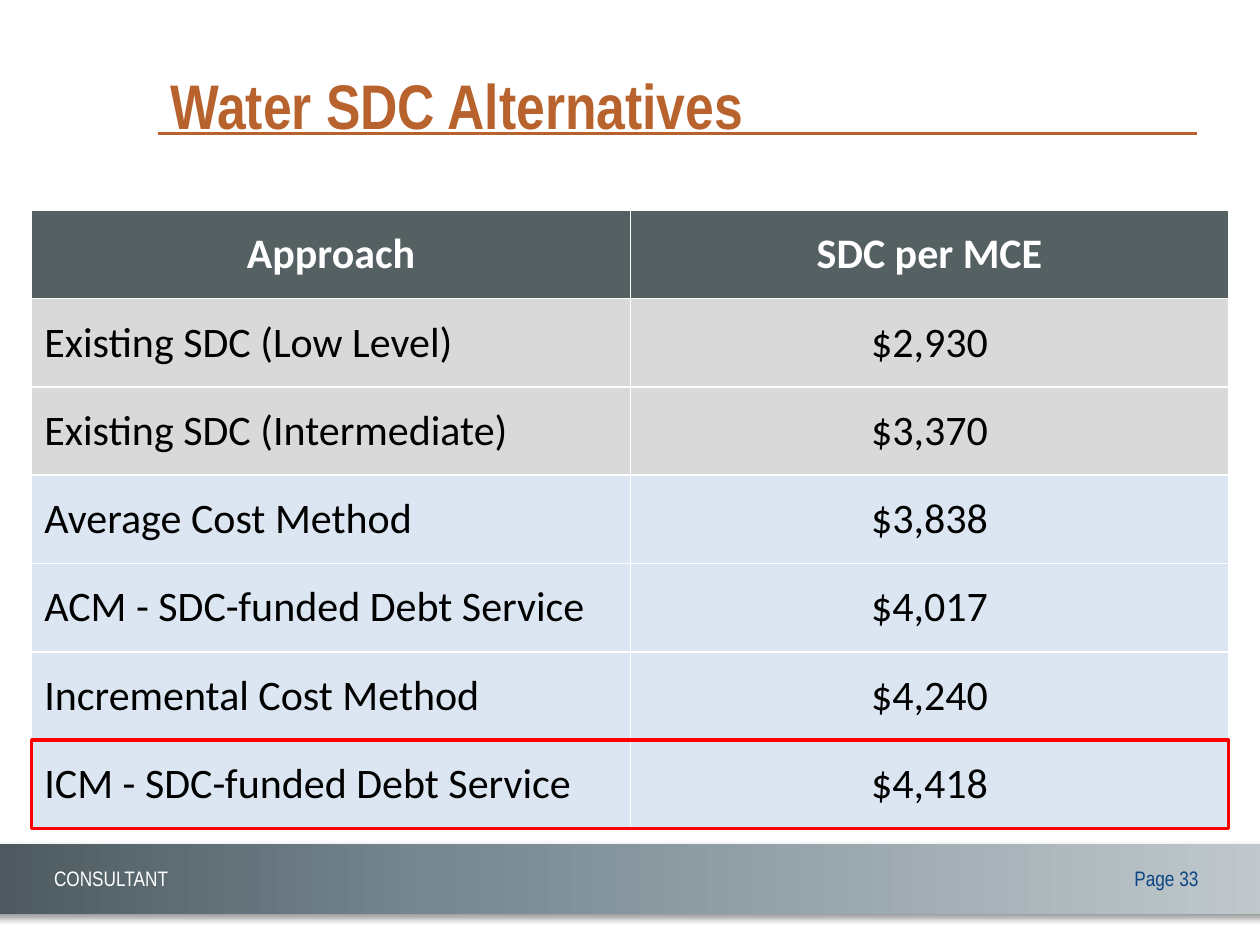
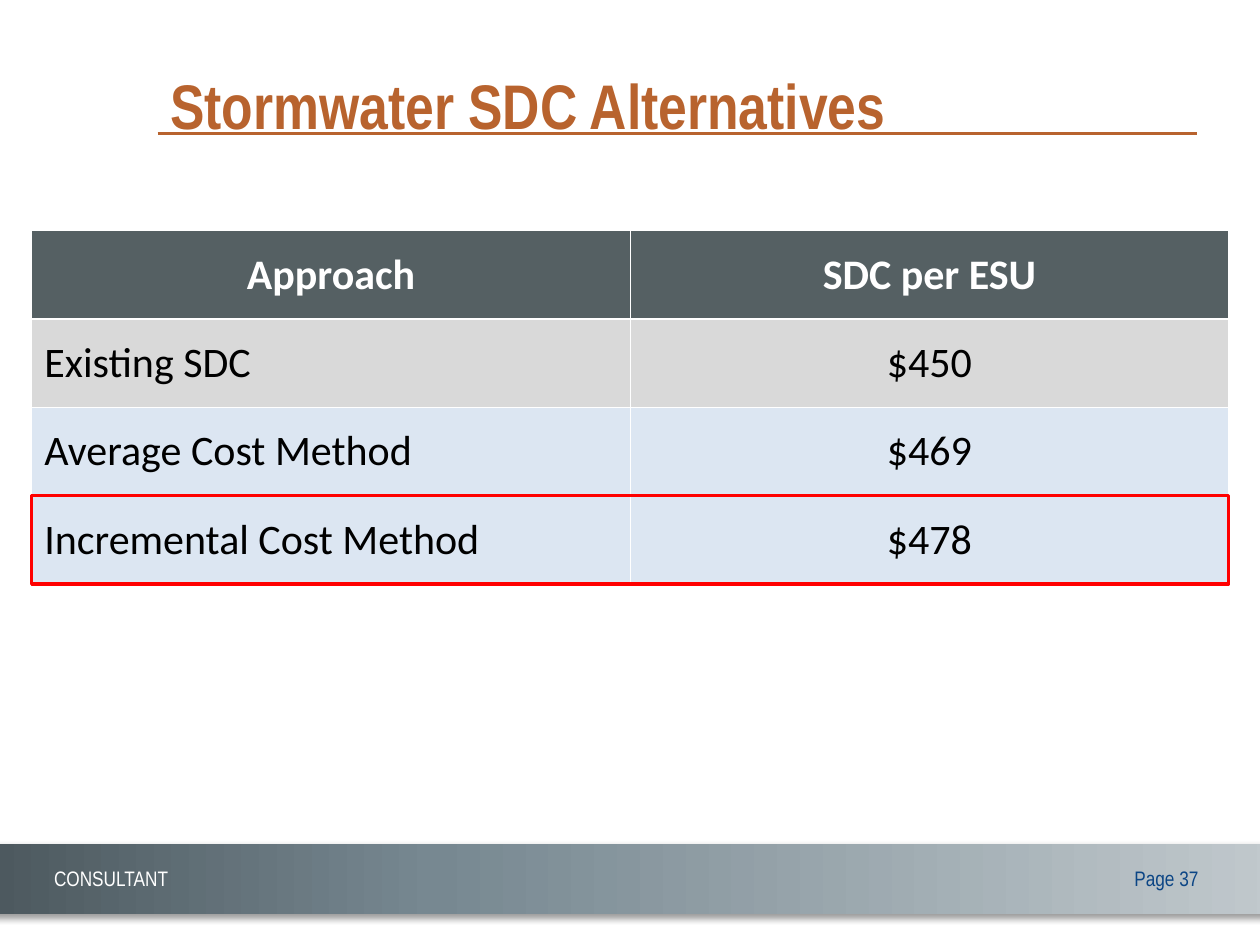
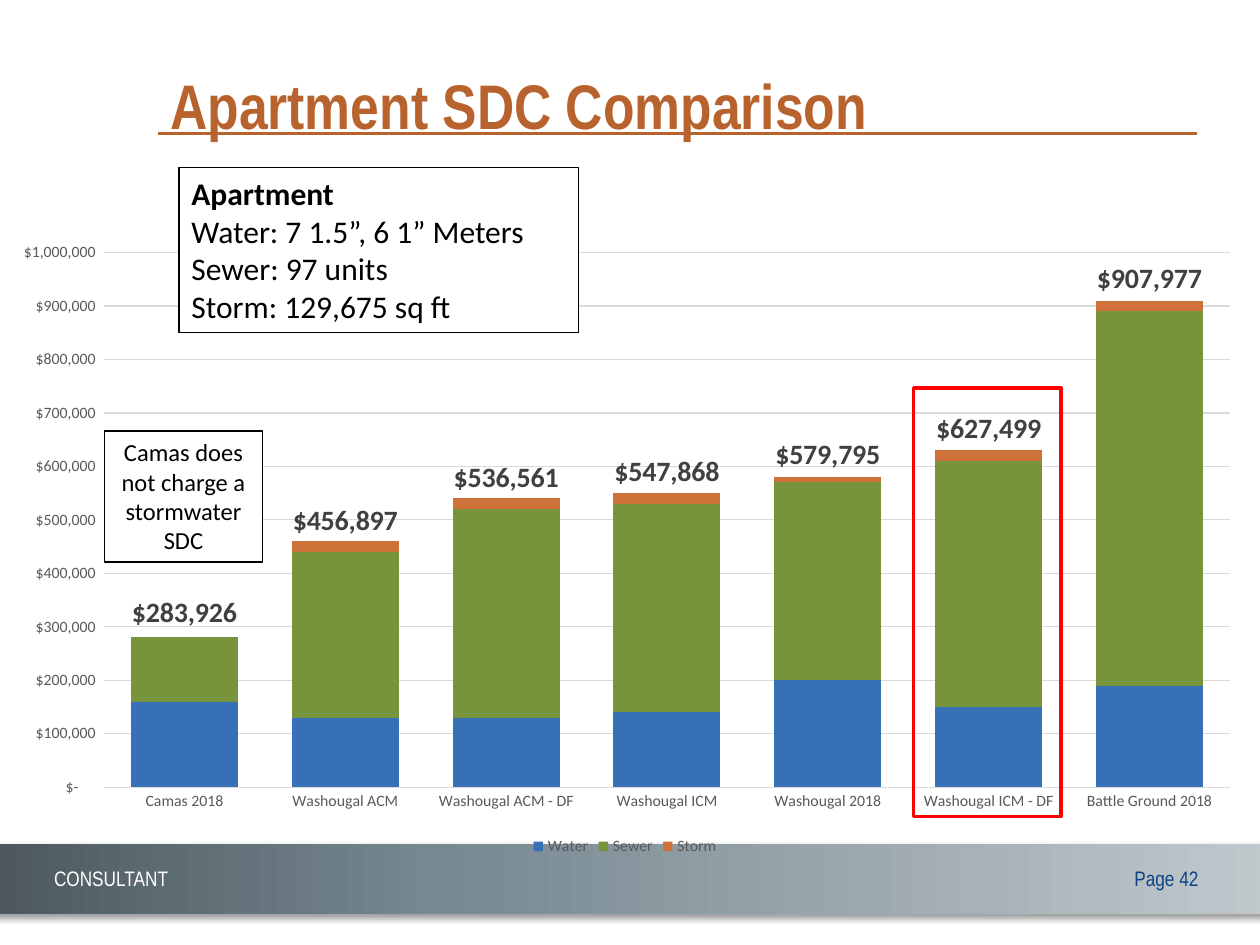
from copy import deepcopy

from lxml.etree import SubElement
from pptx import Presentation
from pptx.chart.data import CategoryChartData
from pptx.dml.color import RGBColor
from pptx.enum.chart import (XL_CHART_TYPE, XL_LABEL_POSITION, XL_LEGEND_POSITION,
                             XL_MARKER_STYLE, XL_TICK_MARK)
from pptx.enum.shapes import MSO_CONNECTOR, MSO_SHAPE
from pptx.enum.text import MSO_ANCHOR, MSO_AUTO_SIZE, PP_ALIGN
from pptx.oxml.ns import qn
from pptx.util import Cm, Pt

TITLE_ONLY = 5
ROW_HEIGHT = 1.78
DOLLARS = r'_("$"* #,##0_);_("$"* \(#,##0\);_("$"* "-"??_);_(@_)'


def color(hex_string):
    return RGBColor.from_string(hex_string)


def set_font(font, size, hex_string, name="Calibri", bold=False):
    font.name = name
    font.size = Pt(size)
    font.bold = bold
    font.color.rgb = color(hex_string)


class Deck:
    """Holds the shared style and the slide being built."""

    RUST = "B8632E"
    RED = "FF0000"
    BLACK = "000000"
    WHITE = "FFFFFF"
    HEADER = "556063"
    EXISTING = "D9D9D9"
    PROPOSED = "DCE6F2"
    GRID = "D9D9D9"
    AXIS_TEXT = "595959"
    BAND_STOPS = [(0, "C1C9CD"), (65, "778891"), (100, "4B575D")]
    NARROW = "Arial Narrow"

    def __init__(self):
        self.presentation = Presentation()
        self.presentation.slide_width = Cm(25.4)
        self.presentation.slide_height = Cm(19.05)
        self.slide = None

    def new_slide(self, title, page):
        layout = self.presentation.slide_layouts[TITLE_ONLY]
        self.slide = self.presentation.slides.add_slide(layout)
        self.band()
        self.text(["Page " + str(page)], 22.35, 17.32, 2.06, 0.76, 12, "0B4585",
                  font=self.NARROW, align=PP_ALIGN.RIGHT)
        self.title_rule()
        self.text(["CONSULTANT"], 0.84, 17.32, 3.6, 0.76, 12, self.WHITE, font=self.NARROW)
        self.title(title)

    def band(self):
        band = self.slide.shapes.add_shape(MSO_SHAPE.RECTANGLE, Cm(-0.43), Cm(17.02),
                                           Cm(26.24), Cm(1.4))
        band.line.fill.background()
        band.fill.gradient()
        band.fill.gradient_angle = 180
        stops = band.element.xpath(".//a:gsLst")[0]
        stops.clear()
        for percent, hex_string in self.BAND_STOPS:
            stop = SubElement(stops, qn("a:gs"), pos=str(percent * 1000))
            SubElement(stop, qn("a:srgbClr"), val=hex_string)
        band.shadow.inherit = False
        effects = band.element.xpath(".//a:effectLst")[0]
        shadow = SubElement(effects, qn("a:outerShdw"), blurRad=str(Pt(4)),
                            dist=str(Pt(3)), dir="2700000", rotWithShape="0")
        shade = SubElement(shadow, qn("a:srgbClr"), val=self.BLACK)
        SubElement(shade, qn("a:alpha"), val="40000")

    def title_rule(self):
        rule = self.slide.shapes.add_connector(MSO_CONNECTOR.STRAIGHT, Cm(3.18), Cm(2.69),
                                               Cm(24.13), Cm(2.69))
        rule.line.color.rgb = color(self.RUST)
        rule.line.width = Pt(1.5)
        SubElement(rule.element.spPr, qn("a:effectLst"))

    def title(self, text):
        title = self.slide.shapes.title
        title.left, title.top, title.width, title.height = Cm(3.18), Cm(0.84), Cm(20.96), Cm(2.54)
        title.element.getparent().append(title.element)  # in front of the rule
        frame = title.text_frame
        frame.text = text
        frame.auto_size = MSO_AUTO_SIZE.NONE
        frame.vertical_anchor = MSO_ANCHOR.MIDDLE
        paragraph = frame.paragraphs[0]
        paragraph.alignment = PP_ALIGN.LEFT
        set_font(paragraph.font, 36, self.RUST, self.NARROW, bold=True)

    def text(self, lines, left, top, width, height, size, hex_string, font="Calibri",
             align=PP_ALIGN.LEFT, bold_first=False):
        box = self.slide.shapes.add_textbox(Cm(left), Cm(top), Cm(width), Cm(height))
        frame = box.text_frame
        frame.word_wrap = True
        frame.text = "\n".join(lines)
        for index, paragraph in enumerate(frame.paragraphs):
            paragraph.alignment = align
            set_font(paragraph.font, size, hex_string, font, bold_first and index == 0)
        return box

    def note(self, lines, left, top, width, height, size, **options):
        """Add a white text box with a thin black outline."""
        box = self.text(lines, left, top, width, height, size, self.BLACK, **options)
        box.fill.solid()
        box.fill.fore_color.rgb = color(self.WHITE)
        box.line.color.rgb = color(self.BLACK)
        box.line.width = Pt(0.75)

    def highlight(self, left, top, width, height):
        frame = self.slide.shapes.add_shape(MSO_SHAPE.RECTANGLE, Cm(left), Cm(top),
                                            Cm(width), Cm(height))
        frame.shadow.inherit = False
        frame.fill.background()
        frame.line.color.rgb = color(self.RED)
        frame.line.width = Pt(2)

    def cost_table(self, top, unit, costs):
        """Add the table of approaches and outline its last row."""
        left, width = 0.64, 24.13
        rows = [("Approach", "SDC per " + unit)] + costs
        table = self.slide.shapes.add_table(len(rows), 2, Cm(left), Cm(top), Cm(width),
                                            Cm(ROW_HEIGHT * len(rows))).table
        for row_index, row in enumerate(rows):
            is_header = row_index == 0
            if is_header:
                fill = self.HEADER
            else:
                fill = self.EXISTING if row[0].startswith("Existing") else self.PROPOSED
            for column_index, text in enumerate(row):
                cell = table.cell(row_index, column_index)
                cell.text = text
                cell.vertical_anchor = MSO_ANCHOR.MIDDLE
                cell.fill.solid()
                cell.fill.fore_color.rgb = color(fill)
                paragraph = cell.text_frame.paragraphs[0]
                centred = is_header or column_index == 1
                paragraph.alignment = PP_ALIGN.CENTER if centred else PP_ALIGN.LEFT
                set_font(paragraph.font, 24, self.WHITE if is_header else self.BLACK,
                         bold=is_header)
        self.highlight(left, top + ROW_HEIGHT * (len(rows) - 1), width, ROW_HEIGHT)

    def stacked_chart(self, left, top, width, height, categories, parts, totals):
        """Add stacked columns whose totals are labels on an unseen line."""
        data = CategoryChartData()
        data.categories = categories
        for name, _, values in parts:
            data.add_series(name, values)
        data.add_series("Total", totals)
        chart = self.slide.shapes.add_chart(XL_CHART_TYPE.COLUMN_STACKED, Cm(left), Cm(top),
                                            Cm(width), Cm(height), data).chart
        set_font(chart.font, 10, self.BLACK)
        chart.has_title = False
        columns = chart.plots[0]
        columns.gap_width = 50
        columns.overlap = 100
        columns.vary_by_categories = False
        for series, (_, hex_string, _) in zip(columns.series, parts):
            series.format.fill.solid()
            series.format.fill.fore_color.rgb = color(hex_string)
        self.style_axes(chart)
        self.totals_as_line(chart)
        self.legend(chart, hidden_index=len(parts))

    def style_axes(self, chart):
        for axis in (chart.category_axis, chart.value_axis):
            axis.major_tick_mark = axis.minor_tick_mark = XL_TICK_MARK.NONE
            set_font(axis.tick_labels.font, 9, self.AXIS_TEXT)
        values = chart.value_axis
        values.minimum_scale, values.maximum_scale, values.major_unit = 0, 1000000, 100000
        values.tick_labels.number_format = DOLLARS
        values.tick_labels.number_format_is_linked = False
        values.format.line.fill.background()
        for line in (chart.category_axis.format.line, values.major_gridlines.format.line):
            line.color.rgb = color(self.GRID)
            line.width = Pt(0.75)

    def totals_as_line(self, chart):
        """Move the last series to a line plot that shows only its labels."""
        bar_chart = chart.element.xpath(".//c:barChart")[0]
        series_element = bar_chart.xpath("c:ser")[-1]
        line_chart = SubElement(bar_chart.getparent(), qn("c:lineChart"))
        bar_chart.addnext(line_chart)
        SubElement(line_chart, qn("c:grouping"), val="standard")
        SubElement(line_chart, qn("c:varyColors"), val="0")
        for flag in series_element.xpath("c:invertIfNegative"):
            series_element.remove(flag)
        line_chart.append(series_element)
        SubElement(line_chart, qn("c:marker"), val="1")
        for axis_id in bar_chart.xpath("c:axId"):
            line_chart.append(deepcopy(axis_id))

        series = chart.plots[1].series[0]
        series.smooth = False
        series.format.line.fill.background()
        series.marker.style = XL_MARKER_STYLE.NONE
        labels = series.data_labels
        labels.show_value = True
        labels.position = XL_LABEL_POSITION.ABOVE
        labels.number_format = DOLLARS
        labels.number_format_is_linked = False
        set_font(labels.font, 16, "404040", bold=True)

    def legend(self, chart, hidden_index):
        chart.has_legend = True
        chart.legend.position = XL_LEGEND_POSITION.BOTTOM
        chart.legend.include_in_layout = False
        set_font(chart.legend.font, 9, self.AXIS_TEXT)
        position = chart.element.xpath(".//c:legend/c:legendPos")[0]
        entry = SubElement(position.getparent(), qn("c:legendEntry"))
        SubElement(entry, qn("c:idx"), val=str(hidden_index))
        SubElement(entry, qn("c:delete"), val="1")
        position.addnext(entry)


def main():
    deck = Deck()

    deck.new_slide("Water SDC Alternatives", 33)
    deck.cost_table(4.24, "MCE", [
        ("Existing SDC (Low Level)", "$2,930"),
        ("Existing SDC (Intermediate)", "$3,370"),
        ("Average Cost Method", "$3,838"),
        ("ACM - SDC-funded Debt Service", "$4,017"),
        ("Incremental Cost Method", "$4,240"),
        ("ICM - SDC-funded Debt Service", "$4,418"),
    ])

    deck.new_slide("Stormwater SDC Alternatives", 37)
    deck.cost_table(4.65, "ESU", [
        ("Existing SDC", "$450"),
        ("Average Cost Method", "$469"),
        ("Incremental Cost Method", "$478"),
    ])

    deck.new_slide("Apartment SDC Comparison", 42)
    deck.stacked_chart(
        -0.1, 4.65, 25.4, 12.7,
        ["Camas 2018", "Washougal ACM", "Washougal ACM - DF", "Washougal ICM",
         "Washougal 2018", "Washougal ICM - DF", "Battle Ground 2018"],
        [("Water", "3770B7", [160000, 130000, 130000, 140000, 200000, 150000, 190000]),
         ("Sewer", "77933C", [120000, 310000, 390000, 390000, 370000, 460000, 700000]),
         ("Storm", "CE723A", [0, 20000, 20000, 20000, 10000, 20000, 20000])],
        [283926, 456897, 536561, 547868, 579795, 627499, 907977])
    deck.note(["Apartment", "Water: 7 1.5”, 6 1” Meters", "Sewer: 97 units",
               "Storm: 129,675 sq ft"], 3.61, 3.38, 8.05, 3.33, 18, bold_first=True)
    deck.note(["Camas does not charge a stormwater SDC"], 2.11, 8.69, 3.18, 2.64, 14,
              align=PP_ALIGN.CENTER)
    deck.highlight(18.42, 7.82, 2.97, 8.64)

    deck.presentation.save("out.pptx")


if __name__ == "__main__":
    main()
